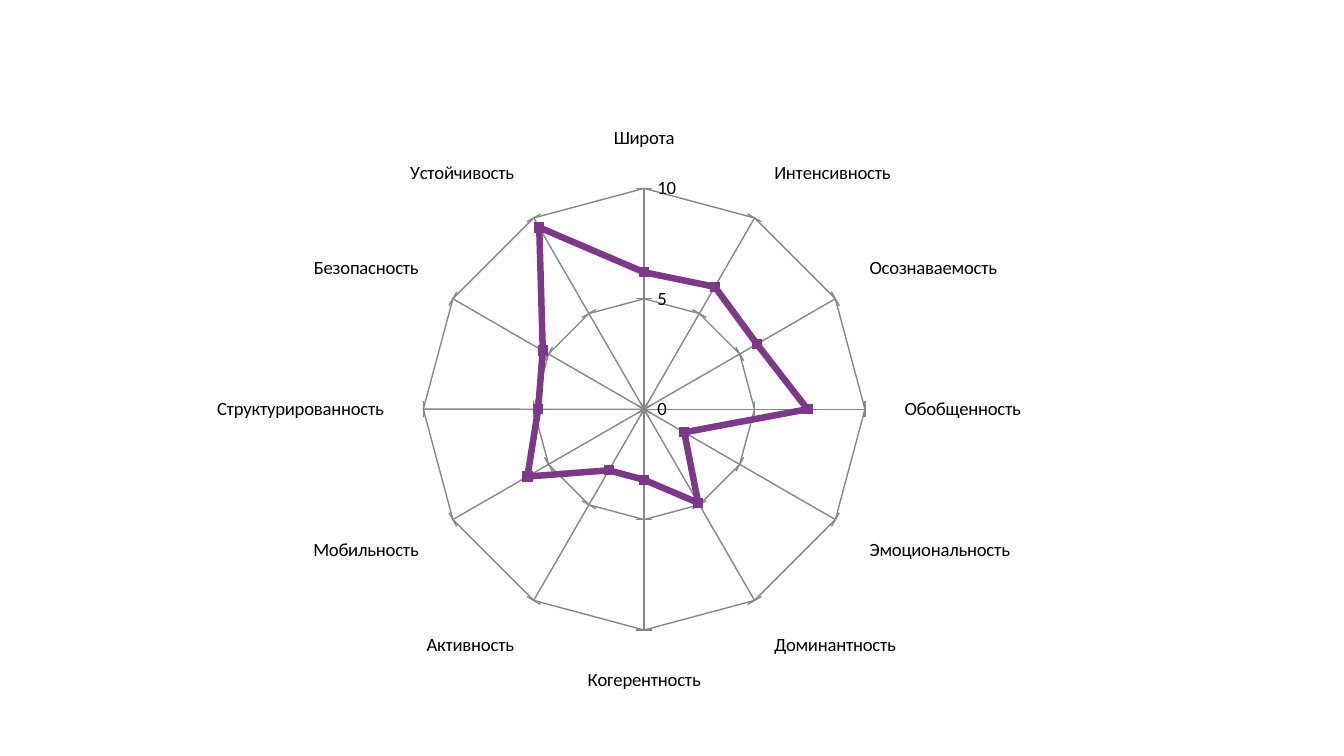
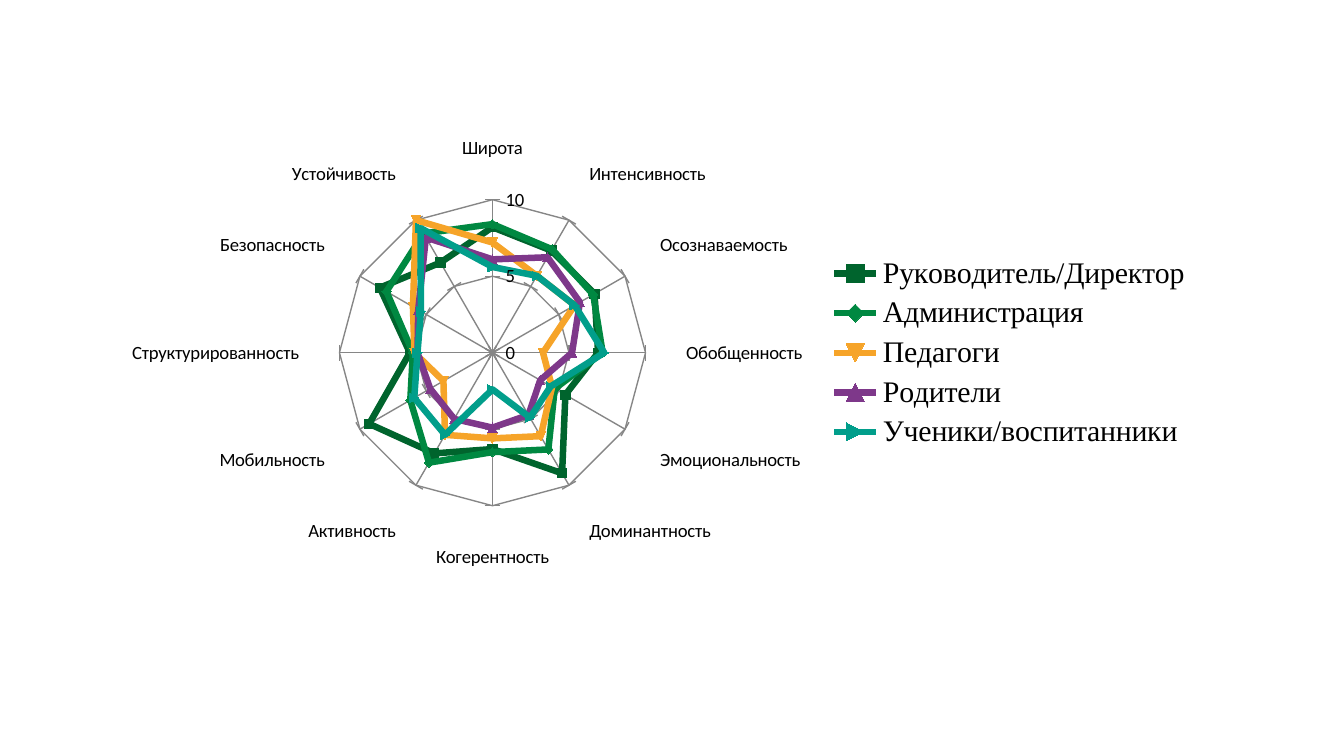
from dataclasses import dataclass

from pptx import Presentation
from pptx.chart.data import CategoryChartData
from pptx.dml.color import RGBColor
from pptx.enum.chart import XL_CHART_TYPE, XL_LEGEND_POSITION, XL_TICK_MARK
from pptx.util import Inches, Pt

RADAR = XL_CHART_TYPE.RADAR_MARKERS
LEGEND_RIGHT = XL_LEGEND_POSITION.RIGHT
TICK_OUT = XL_TICK_MARK.OUTSIDE
TICK_CROSS = XL_TICK_MARK.CROSS


@dataclass(frozen=True)
class Theme:
    text: str = "000000"
    grid: str = "868686"
    dark_green: str = "00642D"
    green: str = "008841"
    orange: str = "F6A429"
    purple: str = "7E388A"
    teal: str = "019E8B"
    font: str = "Calibri"
    legend_font: str = "Times New Roman"
    label_size: int = 10
    legend_size: int = 16
    series_width: float = 3.5
    marker_size: int = 5


THEME = Theme()

SCALES = [
    "Широта", "Интенсивность", "Осознаваемость", "Обобщенность",
    "Эмоциональность", "Доминантность", "Когерентность", "Активность",
    "Мобильность", "Структурированность", "Безопасность", "Устойчивость",
]

# Each series: name, colour, values in the order of SCALES
OVERALL = [
    ("Series 1", THEME.purple,
     [6.2, 6.4, 5.9, 7.4, 2.1, 4.9, 3.2, 3.2, 6.1, 4.8, 5.3, 9.5]),
]
BY_GROUP = [
    ("Руководитель/Директор", THEME.dark_green,
     [8.2, 7.7, 7.7, 6.9, 5.5, 9.1, 6.3, 7.6, 9.3, 5.4, 8.5, 6.8]),
    ("Администрация", THEME.green,
     [8.4, 7.8, 7.6, 7.2, 4.7, 7.3, 6.5, 8.3, 6.2, 5.2, 8, 9]),
    ("Педагоги", THEME.orange,
     [7.2, 5.8, 6.2, 3.3, 4.5, 6.3, 5.6, 6.2, 3.7, 5.1, 6, 10]),
    ("Родители", THEME.purple,
     [6.1, 7.2, 6.6, 5.2, 3.6, 4.7, 4.9, 5, 4.7, 4.9, 5.6, 8.7]),
    ("Ученики/воспитанники", THEME.teal,
     [5.6, 5.8, 6.2, 7.3, 4.4, 4.9, 2.4, 6.2, 5.9, 4.9, 5.4, 9.4]),
]


def rgb(color):
    return RGBColor.from_string(color)


def style_font(font, name, size):
    font.name = name
    font.size = Pt(size)
    font.color.rgb = rgb(THEME.text)


def style_axes(chart):
    for axis, tick in ((chart.category_axis, TICK_OUT), (chart.value_axis, TICK_CROSS)):
        axis.major_tick_mark = tick
        axis.has_major_gridlines = True
        axis.major_gridlines.format.line.color.rgb = rgb(THEME.grid)
        axis.format.line.color.rgb = rgb(THEME.grid)
    scale = chart.value_axis
    scale.minimum_scale, scale.maximum_scale, scale.major_unit = 0, 10, 5
    scale.tick_labels.number_format = "0"
    scale.tick_labels.number_format_is_linked = False


def style_series(chart, colors):
    for series, color in zip(chart.plots[0].series, colors):
        series.smooth = False
        series.format.line.color.rgb = rgb(color)
        series.format.line.width = Pt(THEME.series_width)
        marker = series.marker
        marker.size = THEME.marker_size
        marker.format.fill.solid()
        marker.format.fill.fore_color.rgb = rgb(color)
        marker.format.line.color.rgb = rgb(color)


def add_legend(chart):
    chart.has_legend = True
    chart.legend.position = LEGEND_RIGHT
    chart.legend.include_in_layout = False
    style_font(chart.legend.font, THEME.legend_font, THEME.legend_size)


def add_radar(slide, box, rows):
    """Add a radar chart of all scales; box is left, top, width, height in inches."""
    data = CategoryChartData()
    data.categories = SCALES
    for name, _, values in rows:
        data.add_series(name, values)
    chart = slide.shapes.add_chart(RADAR, *(Inches(v) for v in box), data).chart
    chart.has_title = False
    chart.has_legend = False
    chart.plots[0].vary_by_categories = False
    style_font(chart.font, THEME.font, THEME.label_size)
    style_axes(chart)
    style_series(chart, [color for _, color, _ in rows])
    return chart


def main():
    prs = Presentation()
    prs.slide_width = Inches(10)
    prs.slide_height = prs.slide_width * 9 // 16
    blank = prs.slide_layouts[6]

    overall = prs.slides.add_slide(blank)
    add_radar(overall, (1.49, 0.74, 6.23, 4.61), OVERALL)

    groups = prs.slides.add_slide(blank)
    add_legend(add_radar(groups, (0.82, 0.26, 8.15, 4.73), BY_GROUP))

    prs.save("out.pptx")


if __name__ == "__main__":
    main()
